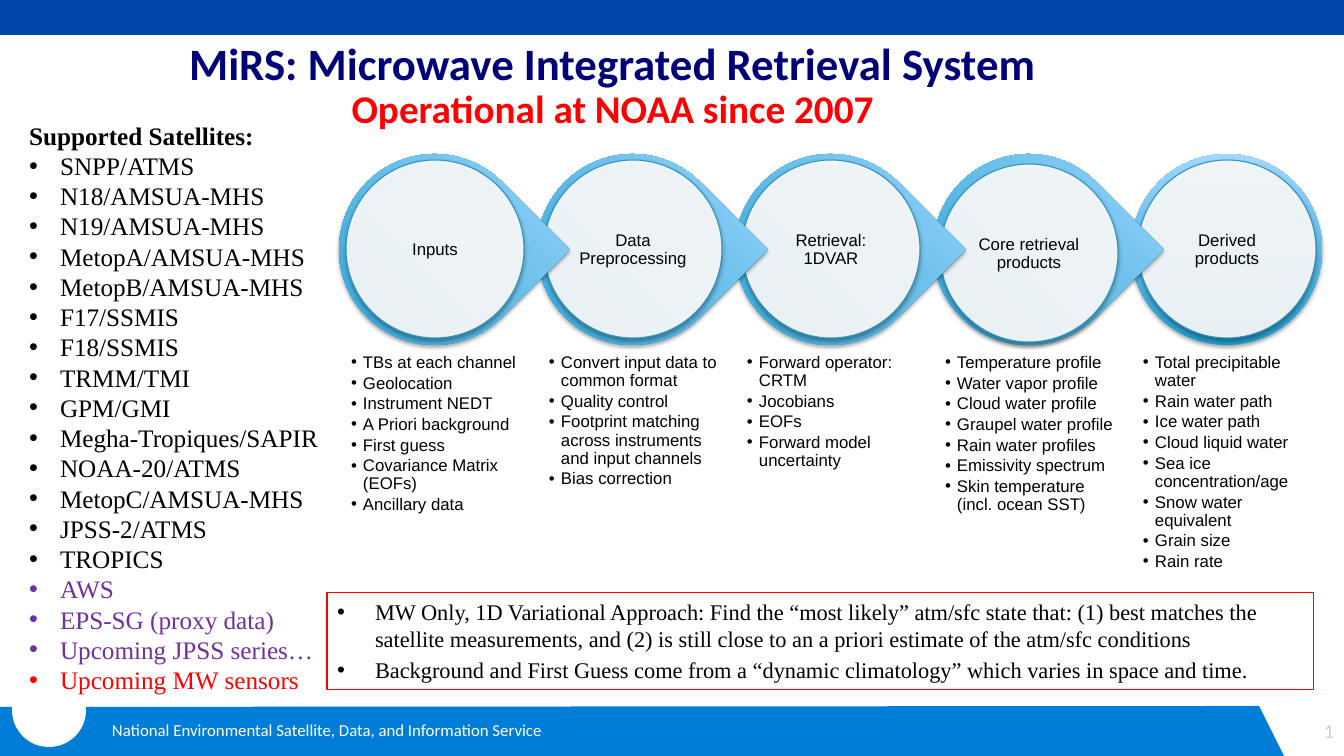
from pptx import Presentation
from pptx.dml.color import RGBColor
from pptx.enum.shapes import MSO_SHAPE as SHAPE
from pptx.enum.text import MSO_ANCHOR as ANCHOR, PP_ALIGN as ALIGN
from pptx.oxml import parse_xml
from pptx.oxml.ns import nsdecls, qn
from pptx.util import Emu, Pt

WHITE = RGBColor(0xFF, 0xFF, 0xFF)
BLACK = RGBColor(0x00, 0x00, 0x00)
RED = RGBColor(0xFF, 0x00, 0x00)
PURPLE = RGBColor(0x70, 0x30, 0xA0)
NAVY = RGBColor(0x01, 0x00, 0x78)
TOP_BLUE = RGBColor(0x01, 0x47, 0xAA)
FOOT_BLUE = RGBColor(0x00, 0x7D, 0xD6)
PALE_GRAY = RGBColor(0xCC, 0xCC, 0xCC)
RING_DARK = RGBColor(0x20, 0x9D, 0xCE)
RING_LIGHT = RGBColor(0xA0, 0xD8, 0xFF)
DISC_EDGE = RGBColor(0x34, 0x94, 0xBA)

SATELLITES = [
    "Supported Satellites:", "SNPP/ATMS", "N18/AMSUA-MHS", "N19/AMSUA-MHS",
    "MetopA/AMSUA-MHS", "MetopB/AMSUA-MHS", "F17/SSMIS", "F18/SSMIS",
    "TRMM/TMI", "GPM/GMI", "Megha-Tropiques/SAPIR", "NOAA-20/ATMS",
    "MetopC/AMSUA-MHS", "JPSS-2/ATMS", "TROPICS",
]
UPCOMING = ["AWS", "EPS-SG (proxy data)", "Upcoming JPSS series…",
            "Upcoming MW sensors"]
STAGES = [
    ("Inputs", ["TBs at each channel", "Geolocation", "Instrument NEDT",
                "A Priori background", "First guess",
                "Covariance Matrix (EOFs)", "Ancillary data"]),
    ("Data Preprocessing", ["Convert input data to common format",
                            "Quality control",
                            "Footprint matching across instruments and input channels",
                            "Bias correction"]),
    ("Retrieval: 1DVAR", ["Forward operator: CRTM", "Jocobians", "EOFs",
                          "Forward model uncertainty"]),
    ("Core retrieval products", ["Temperature profile", "Water vapor profile",
                                 "Cloud water profile", "Graupel water profile",
                                 "Rain water profiles", "Emissivity spectrum",
                                 "Skin temperature (incl. ocean SST)"]),
    ("Derived products", ["Total precipitable water", "Rain water path",
                          "Ice water path", "Cloud liquid water",
                          "Sea ice concentration/age", "Snow water equivalent",
                          "Grain size", "Rain rate"]),
]
APPROACH = [
    "MW Only, 1D Variational Approach: Find the “most likely” atm/sfc state "
    "that: (1) best matches the satellite measurements, and (2) is still close "
    "to an a priori estimate of the atm/sfc conditions",
    "Background and First Guess come from a “dynamic climatology” which varies "
    "in space and time.",
]


def px(n):
    return Emu(round(n * 914400 / 100.8))


class Deck:
    """Draws styled elements on the current slide, measured in px."""

    def __init__(self, prs):
        self.s = prs.slides.add_slide(prs.slide_layouts[6])

    def shape(self, kind, x, y, w, h, fill=None, edge=None):
        sp = self.s.shapes.add_shape(kind, px(x), px(y), px(w), px(h))
        return self.paint(sp, fill, edge)

    def paint(self, sp, fill=None, edge=None):
        sp.shadow.inherit = False
        if fill is None:
            sp.fill.background()
        else:
            sp.fill.solid()
            sp.fill.fore_color.rgb = fill
        if edge is None:
            sp.line.fill.background()
        else:
            sp.line.color.rgb = edge
            sp.line.width = Pt(0.75)
        return sp

    def outline(self, points, fill):
        (x, y), *rest = [(px(a), px(b)) for a, b in points]
        fb = self.s.shapes.build_freeform(x, y)
        fb.add_line_segments(rest)
        return self.paint(fb.convert_to_shape(), fill)

    def drop_shadow(self, sp):
        sp.element.spPr.find(qn("a:effectLst")).append(parse_xml(
            f'<a:outerShdw {nsdecls("a")} blurRad="39370" dist="22860" '
            'dir="5400000" rotWithShape="0"><a:srgbClr val="000000">'
            '<a:alpha val="35000"/></a:srgbClr></a:outerShdw>'))

    def ring(self, kind, x, y, d):
        sp = self.shape(kind, x, y, d, d)
        sp.fill.gradient()
        sp.fill.gradient_angle = 90
        for stop, color in zip(sp.fill.gradient_stops, (RING_DARK, RING_LIGHT)):
            stop.color.rgb = color
        if kind == SHAPE.TEAR:
            sp.adjustments[0] = 1
            sp.rotation = 45
        self.drop_shadow(sp)

    def disc(self, x, y, d):
        sp = self.shape(SHAPE.OVAL, x, y, d, d, WHITE, DISC_EDGE)
        color = sp.element.spPr.find(qn("a:solidFill"))[0]
        color.append(parse_xml(f'<a:alpha {nsdecls("a")} val="90000"/>'))
        self.drop_shadow(sp)

    def text(self, x, y, w, h, lines, size, font, color=BLACK, **style):
        sp = self.s.shapes.add_textbox(px(x), px(y), px(w), px(h))
        return self.set_text(sp, lines, size, font, color, **style)

    def set_text(self, sp, lines, size, font, color=BLACK, align=ALIGN.LEFT,
                 anchor=ANCHOR.TOP, inset=(10, 5), indent=0, plain=0,
                 spacing=None, before=0, after=0):
        tf = sp.text_frame
        tf.word_wrap = True
        tf.vertical_anchor = anchor
        tf.margin_left = tf.margin_right = px(inset[0])
        tf.margin_top = tf.margin_bottom = px(inset[1])
        tf.text = "\n".join(lines)
        for i, p in enumerate(tf.paragraphs):
            p.alignment = align
            p.line_spacing = spacing
            p.space_before = Pt(before if i else 0)
            p.space_after = Pt(after)
            if indent and i >= plain:
                self.bullet(p, indent)
            for r in p.runs:
                r.font.size = Pt(size)
                r.font.name = font
                r.font.color.rgb = color
        return tf

    def bullet(self, p, indent):
        pPr = p._p.get_or_add_pPr()
        pPr.set("marL", str(px(indent)))
        pPr.set("indent", str(-px(indent)))
        for tag in ('buFont typeface="Arial"', 'buChar char="•"'):
            name, attribute = tag.split()
            pPr.append(parse_xml(f'<a:{name} {nsdecls("a")} {attribute}/>'))

    def stage(self, i, title, items):
        x = 339 + 198 * i
        drop = 4 if i == 3 else 0
        last = i == len(STAGES) - 1
        self.ring(SHAPE.OVAL if last else SHAPE.TEAR, x, 154, 191)
        self.disc(x + 7, 160 + drop, 178)
        self.text(x + 32, 186 + drop, 128, 128, [title], 12, "Arial",
                  align=ALIGN.CENTER, anchor=ANCHOR.MIDDLE, inset=(2, 2),
                  spacing=0.9, after=4.2)
        self.text(x + 7, 349, 178, 105, items, 12, "Arial", inset=(5, 5),
                  indent=12, spacing=0.9, after=1.8)


def main():
    prs = Presentation()
    prs.slide_width, prs.slide_height = px(1344), px(756)
    deck = Deck(prs)

    deck.text(1253, 711, 91, 40, ["1"], 14, "Calibri", PALE_GRAY,
              align=ALIGN.RIGHT, anchor=ANCHOR.MIDDLE)
    deck.shape(SHAPE.RECTANGLE, 0, 0, 1344, 35, TOP_BLUE)
    deck.outline([(0, 707), (1259, 706), (1284, 756), (0, 756), (0, 707)], FOOT_BLUE)
    deck.shape(SHAPE.OVAL, 12, 673, 74, 74, WHITE)
    deck.text(102, 715, 845, 30,
              ["National Environmental Satellite, Data, and Information Service"],
              12, "Calibri", WHITE)

    tf = deck.text(19, 115, 336, 591, SATELLITES + UPCOMING, 18,
                   "Times New Roman", indent=31, plain=1)
    tf.paragraphs[0].runs[0].font.bold = True
    for p in tf.paragraphs[len(SATELLITES):]:
        p.runs[0].font.color.rgb = PURPLE
    tf.paragraphs[-1].runs[0].font.color.rgb = RED

    for i, (title, items) in reversed(list(enumerate(STAGES))):
        deck.stage(i, title, items)

    box = deck.shape(SHAPE.RECTANGLE, 327, 593, 987, 97, edge=RED)
    deck.set_text(box, APPROACH, 16, "Times New Roman", indent=38, before=3.2)

    tf = deck.text(25, 14, 1175, 146,
                   ["MiRS: Microwave Integrated Retrieval System\v"
                    "Operational at NOAA since 2007"],
                   32, "Calibri", NAVY, align=ALIGN.CENTER,
                   anchor=ANCHOR.MIDDLE, spacing=0.9)
    title, subtitle = tf.paragraphs[0].runs
    title.font.bold = subtitle.font.bold = True
    subtitle.font.size = Pt(28)
    subtitle.font.color.rgb = RED

    prs.save("out.pptx")


if __name__ == "__main__":
    main()
